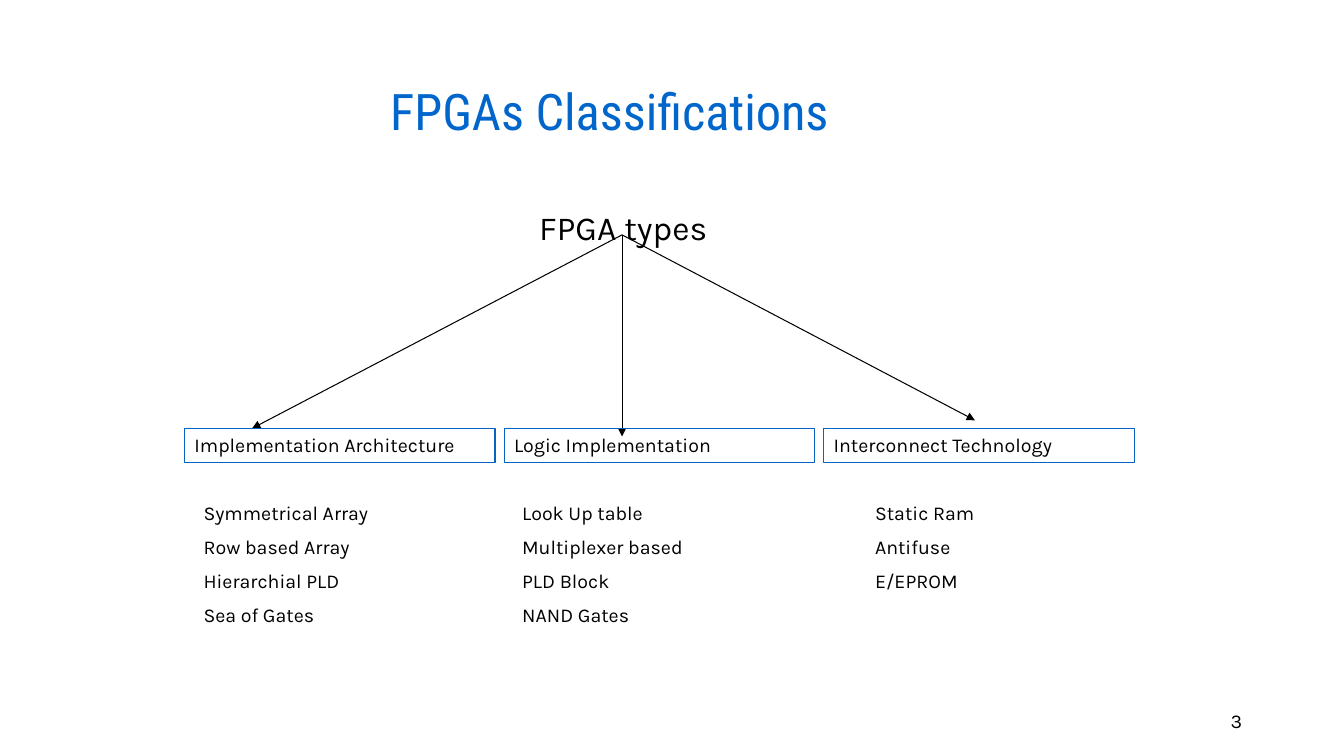
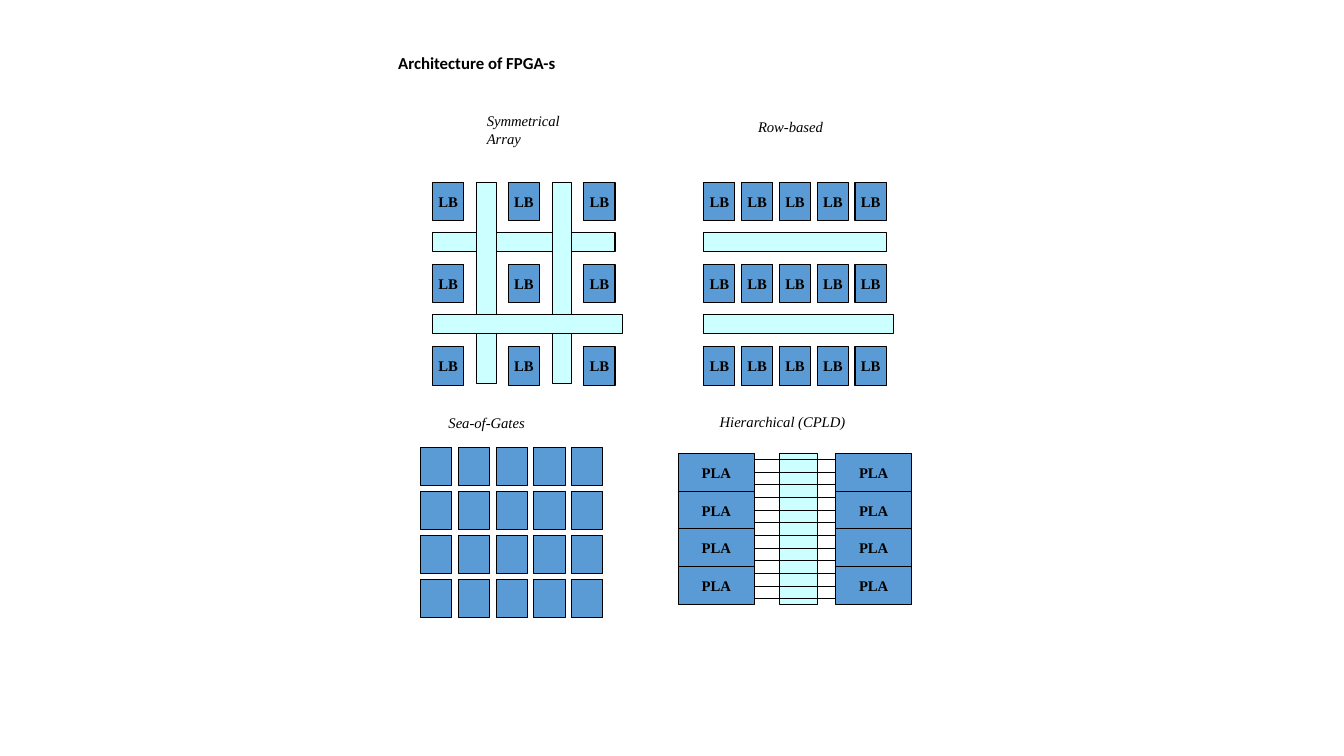
from pptx import Presentation
from pptx.dml.color import RGBColor
from pptx.enum.shapes import MSO_CONNECTOR, MSO_SHAPE
from pptx.enum.text import MSO_ANCHOR, PP_ALIGN
from pptx.oxml.ns import qn
from pptx.util import Inches, Pt
from lxml import etree

RECTANGLE = MSO_SHAPE.RECTANGLE
STRAIGHT = MSO_CONNECTOR.STRAIGHT
TOP, MIDDLE = MSO_ANCHOR.TOP, MSO_ANCHOR.MIDDLE
LEFT, CENTER, RIGHT = PP_ALIGN.LEFT, PP_ALIGN.CENTER, PP_ALIGN.RIGHT

COLORS = {
    "black": "000000",
    "title": "0066CC",
    "heading_border": "0563C1",
    "block": "5B9BD5",
    "channel": "CCFFFF",
}
STYLES = {
    "title": {"font": "Roboto Condensed", "size": 36, "color": "title"},
    "small_title": {"font": "Calibri", "size": 12, "bold": True},
    "root": {"font": "Karla", "size": 24},
    "body": {"font": "Karla", "size": 14},
    "caption": {"font": "Times New Roman", "size": 10.5, "italic": True},
    "block": {"font": "Times New Roman", "size": 10.5, "bold": True},
}
LINE_WIDTH = 0.75
BLOCK_WIDTH, BLOCK_HEIGHT = 0.31, 0.38
CHANNEL = 0.19
ROW_TOPS = (1.81, 2.62, 3.44)
CHANNEL_TOPS = (2.31, 3.12)
CHANNEL_WIDTHS = (1.81, 1.88)


def rgb(name):
    return RGBColor.from_string(COLORS[name])


def spread(first, last, count):
    return [first + (last - first) * index / (count - 1) for index in range(count)]


def write_text(shape, lines, style, align=LEFT, anchor=TOP, wrap=True, gap=0):
    look = STYLES[style]
    frame = shape.text_frame
    frame.word_wrap = wrap
    frame.vertical_anchor = anchor
    for index, line in enumerate(lines):
        para = frame.add_paragraph() if index else frame.paragraphs[0]
        para.alignment = align
        if index:
            para.space_before = Pt(gap)
        span = para.add_run()
        span.text = line
        span.font.name = look["font"]
        span.font.size = Pt(look["size"])
        span.font.bold = look.get("bold", False)
        span.font.italic = look.get("italic", False)
        span.font.color.rgb = rgb(look.get("color", "black"))


def add_text(page, area, lines, style, **layout):
    box = page.shapes.add_textbox(*map(Inches, area))
    write_text(box, lines, style, **layout)


def add_box(page, area, fill=None, border="black"):
    box = page.shapes.add_shape(RECTANGLE, *map(Inches, area))
    box.shadow.inherit = False
    if fill:
        box.fill.solid()
        box.fill.fore_color.rgb = rgb(fill)
    else:
        box.fill.background()
    box.line.color.rgb = rgb(border)
    box.line.width = Pt(LINE_WIDTH)
    return box


def add_line(page, start, end, arrow=False):
    line = page.shapes.add_connector(STRAIGHT, *map(Inches, (*start, *end)))
    line.line.color.rgb = rgb("black")
    line.line.width = Pt(LINE_WIDTH)
    if arrow:
        etree.SubElement(line.line._get_or_add_ln(), qn("a:tailEnd"), type="triangle")
    etree.SubElement(line._element.spPr, qn("a:effectLst"))


def add_blocks(page, lefts, tops, label=None, width=BLOCK_WIDTH):
    for top in tops:
        for left in lefts:
            block = add_box(page, (left, top, width, BLOCK_HEIGHT), "block")
            if label:
                write_text(block, [label], "block", align=CENTER, anchor=MIDDLE, wrap=False)


def add_caption(page, area, *lines):
    add_text(page, area, lines, "caption", wrap=False)


def add_row_channel(page, left, index):
    area = (left, CHANNEL_TOPS[index], CHANNEL_WIDTHS[index], CHANNEL)
    add_box(page, area, "channel")


def draw_symmetrical_array(page):
    left = 4.29
    add_caption(page, (4.73, 1.06, 0.94, 0.45), "Symmetrical", "Array")
    add_blocks(page, spread(left, 5.79, 3), ROW_TOPS, "LB")
    add_row_channel(page, left, 0)
    for column_left in (4.73, 5.48):
        add_box(page, (column_left, ROW_TOPS[0], CHANNEL, 2), "channel")
    add_row_channel(page, left, 1)


def draw_row_based(page):
    left = 6.98
    add_caption(page, (7.42, 1.12, 0.86, 0.28), "Row-based")
    add_blocks(page, spread(left, 8.48, 5), ROW_TOPS, "LB")
    for index in range(len(CHANNEL_TOPS)):
        add_row_channel(page, left, index)


def draw_sea_of_gates(page):
    add_caption(page, (4.35, 4.06, 0.97, 0.28), "Sea-of-Gates")
    add_blocks(page, spread(4.17, 5.67, 5), spread(4.44, 5.75, 4))


def draw_hierarchical(page):
    left, right, width = 6.73, 8.29, 0.75
    add_caption(page, (7.04, 4.05, 1.47, 0.28), "Hierarchical (CPLD)")
    add_blocks(page, (left, right), spread(4.5, 5.62, 4), "PLA", width)
    add_box(page, (7.73, 4.5, 0.38, 1.5), "channel")
    for y in spread(4.56, 5.94, 12):
        add_line(page, (left + width, y), (right, y))


def build_classifications(page):
    add_text(page, (9.42, 6.95, 3, 0.4), ["3"], "body", align=RIGHT, anchor=MIDDLE)
    add_text(page, (3.42, 0.75, 5.25, 0.75), ["FPGAs Classifications"], "title",
             align=CENTER, wrap=False)
    root = (6.17, 2.33)
    branches = [
        ("Implementation Architecture", 1.83, (2.5, 4.25), 1.92,
         ["Symmetrical Array", "Row based Array", "Hierarchial PLD", "Sea of Gates"]),
        ("Logic Implementation", 5, (6.17, 4.33), 5.08,
         ["Look Up table", "Multiplexer based", "PLD Block", "NAND Gates"]),
        ("Interconnect Technology", 8.17, (9.67, 4.17), 8.58,
         ["Static Ram", "Antifuse", "E/EPROM"]),
    ]
    for heading, left, arrow_end, list_left, kinds in branches:
        add_line(page, root, arrow_end, arrow=True)
        box = add_box(page, (left, 4.25, 3.08, 0.34), border="heading_border")
        write_text(box, [heading], "body")
        add_text(page, (list_left, 4.92, 2.25, 0.35 * len(kinds)), kinds, "body", gap=7.5)
    add_text(page, (5.25, 2, 2.33, 0.5), ["FPGA types"], "root")


def build_architecture(page):
    draw_symmetrical_array(page)
    draw_row_based(page)
    draw_sea_of_gates(page)
    draw_hierarchical(page)
    add_text(page, (3.85, 0, 4.78, 1.25), ["Architecture of FPGA-s"], "small_title",
             anchor=MIDDLE)


def main():
    deck = Presentation()
    deck.slide_width, deck.slide_height = Inches(13.33), Inches(7.5)
    blank = deck.slide_layouts[6]
    for build in (build_classifications, build_architecture):
        build(deck.slides.add_slide(blank))
    deck.save("out.pptx")


if __name__ == "__main__":
    main()
